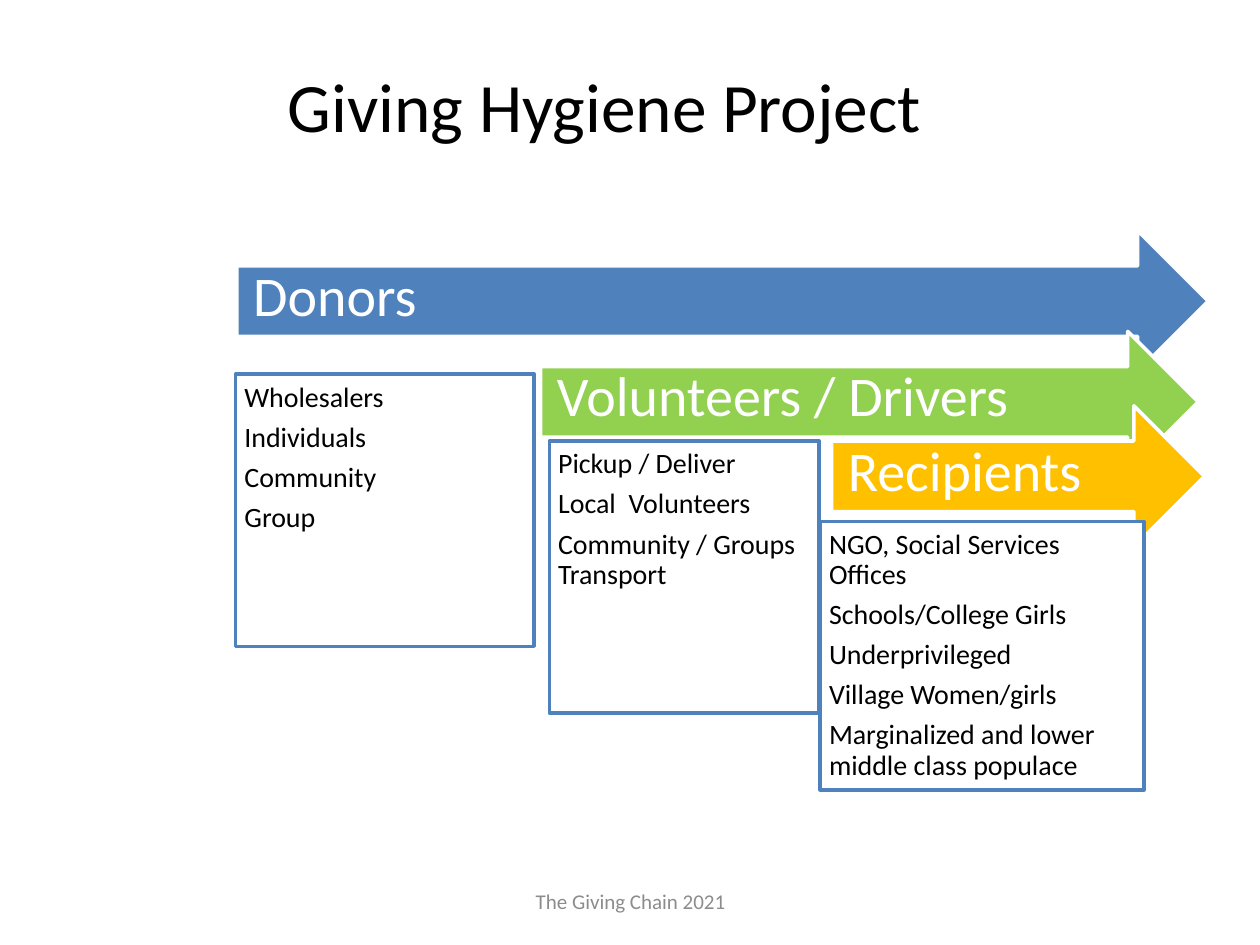
"""Build the Giving Hygiene Project slide with its chain of arrows and lists."""
import pptx
import pptx.dml.color
import pptx.enum.shapes
import pptx.enum.text
import pptx.util

Inches, Pt = pptx.util.Inches, pptx.util.Pt
RGBColor = pptx.dml.color.RGBColor
Shape = pptx.enum.shapes.MSO_SHAPE
Align = pptx.enum.text.PP_ALIGN
Anchor = pptx.enum.text.MSO_ANCHOR

BLACK = RGBColor(0x00, 0x00, 0x00)
WHITE = RGBColor(0xFF, 0xFF, 0xFF)
GRAY = RGBColor(0x8C, 0x8C, 0x8C)
BLUE = RGBColor(0x4F, 0x81, 0xBD)
GREEN = RGBColor(0x92, 0xD0, 0x50)
GOLD = RGBColor(0xFF, 0xC0, 0x00)

CHAIN = [
    ("Donors", BLUE, (1.88, 1.83, 7.71, 1.12), (1.87, 2.97, 2.37, 2.16),
     ["Wholesalers", "Individuals", "Community", "Group"]),
    ("Volunteers / Drivers", GREEN, (4.29, 2.63, 5.22, 1.12), (4.36, 3.5, 2.14, 2.16),
     ["Pickup / Deliver", "Local  Volunteers", "Community / Groups Transport"]),
    ("Recipients", GOLD, (6.6, 3.22, 2.96, 1.12), (6.51, 4.14, 2.57, 2.13),
     ["NGO, Social Services Offices", "Schools/College Girls", "Underprivileged",
      "Village Women/girls", "Marginalized and lower middle class populace"]),
]


def write(frame, lines, size=16, color=BLACK, align=Align.LEFT, anchor=Anchor.MIDDLE,
          inset=(0.1, 0.05, 0.1, 0.05), lead=None, after=0):
    frame.auto_size = pptx.enum.text.MSO_AUTO_SIZE.NONE
    frame.word_wrap = True
    frame.vertical_anchor = anchor
    (frame.margin_left, frame.margin_top,
     frame.margin_right, frame.margin_bottom) = map(Inches, inset)
    for i, line in enumerate(lines):
        para = frame.paragraphs[0] if i == 0 else frame.add_paragraph()
        para.text = line
        para.alignment = align
        para.line_spacing = lead
        para.space_before = Pt(0)
        para.space_after = Pt(after)
        para.font.name = "Calibri"
        para.font.size = Pt(size)
        para.font.color.rgb = color


class Deck:
    font = 16
    edge = 2
    lead = 0.9
    gap = 0.35

    def __init__(self):
        self.file = pptx.Presentation()
        self.file.slide_width, self.file.slide_height = Inches(10), Inches(7.5)
        self.slide = self.file.slides.add_slide(self.file.slide_layouts[5])

    def title(self, text, box):
        head = self.slide.shapes.title
        head.left, head.top, head.width, head.height = map(Inches, box)
        write(head.text_frame, [text], size=39.6, align=Align.CENTER)

    def footer(self, text, box):
        foot = self.slide.shapes.add_textbox(*map(Inches, box))
        write(foot.text_frame, [text], size=12, color=GRAY, align=Align.CENTER)

    def shape(self, kind, box, fill, line):
        item = self.slide.shapes.add_shape(kind, *map(Inches, box))
        item.shadow.inherit = False
        item.fill.solid()
        item.fill.fore_color.rgb = fill
        item.line.color.rgb = line
        item.line.width = Pt(self.edge)
        return item

    def arrow(self, text, box, fill):
        item = self.shape(Shape.RIGHT_ARROW, box, fill, WHITE)
        size = 2 * self.font
        write(item.text_frame, [text], size=size, color=WHITE, lead=self.lead,
              after=self.gap * size, inset=(0.13, 0.13, 0, 0.18))

    def panel(self, lines, box):
        item = self.shape(Shape.RECTANGLE, box, WHITE, BLUE)
        write(item.text_frame, lines, size=self.font, anchor=Anchor.TOP,
              lead=self.lead, after=self.gap * self.font, inset=(0.07,) * 4)


def main():
    deck = Deck()
    deck.title("Giving Hygiene Project", (1.67, 0.5, 6.26, 0.67))
    deck.footer("The Giving Chain 2021", (3.42, 6.95, 3.17, 0.4))
    for name, fill, place, box, lines in CHAIN:
        deck.arrow(name, place, fill)
        deck.panel(lines, box)
    deck.file.save("out.pptx")


if __name__ == "__main__":
    main()
